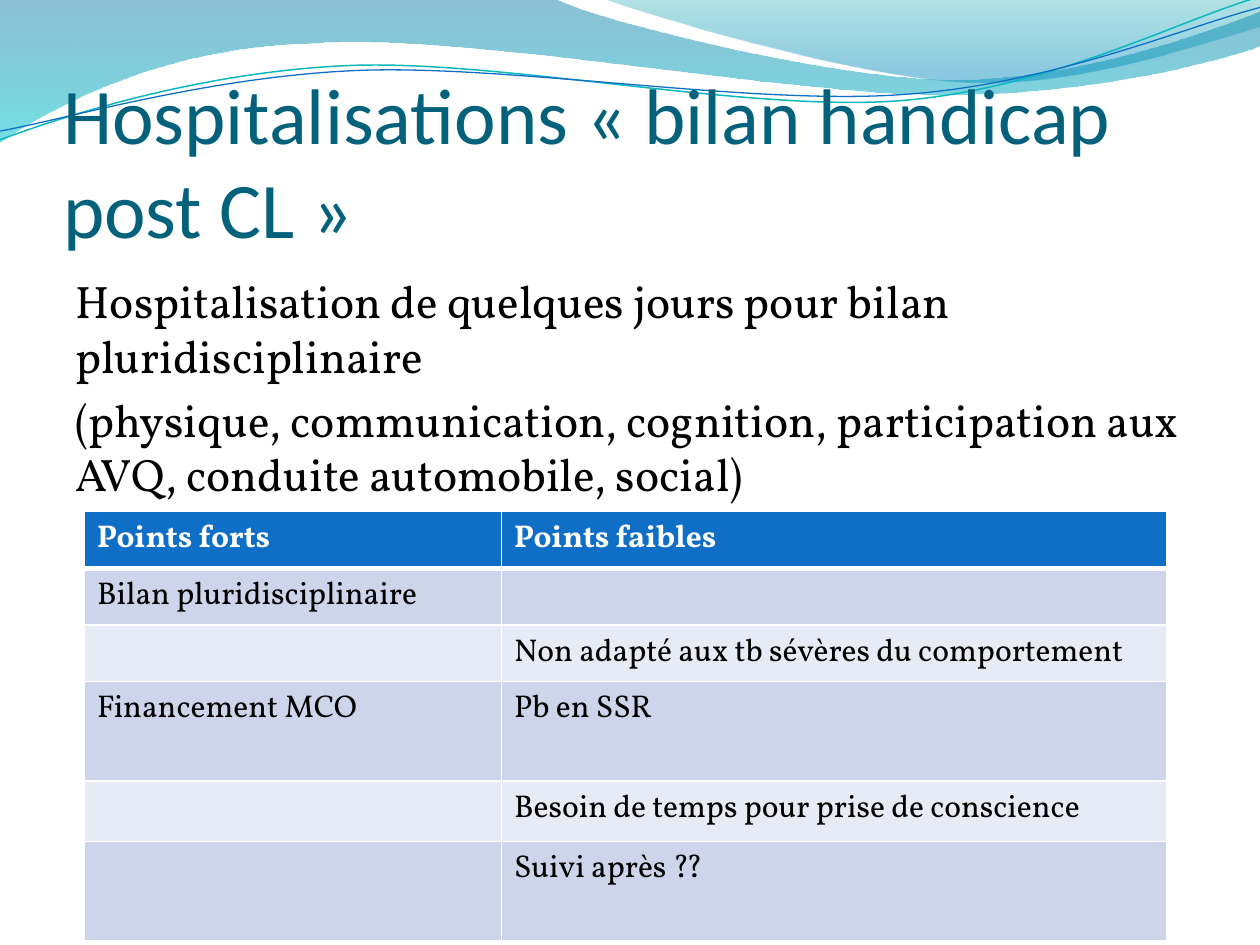
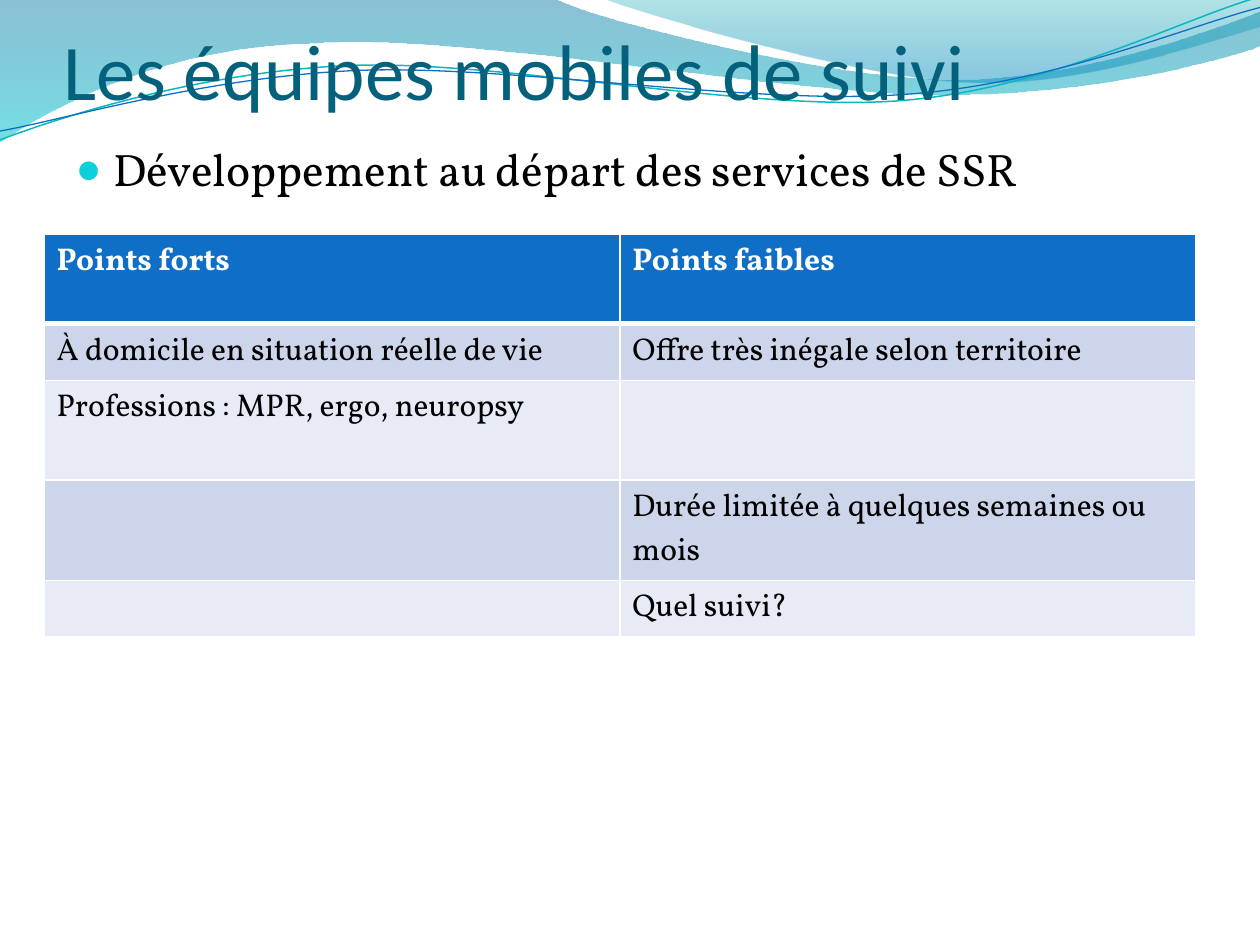
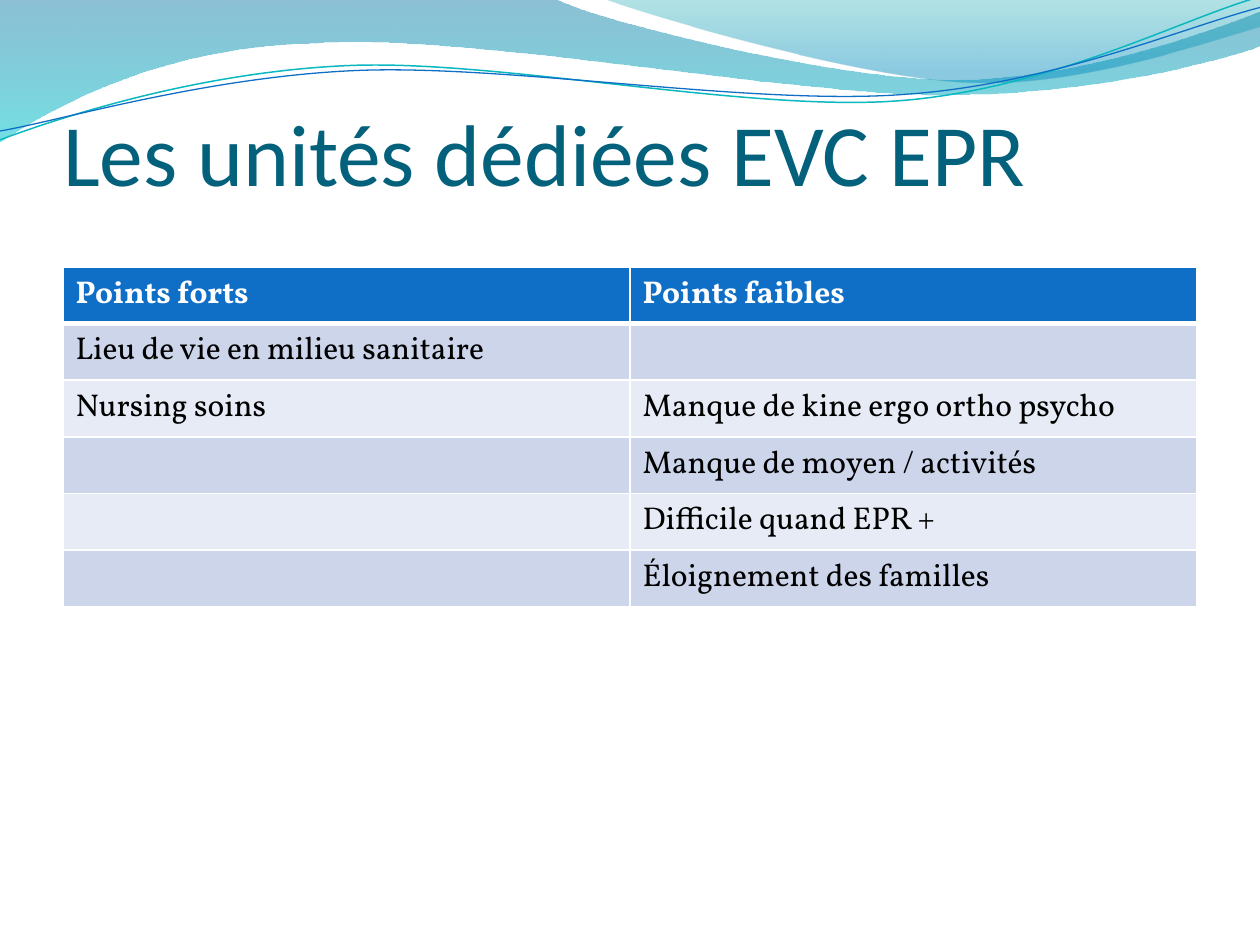
from math import cos, radians, sin

from pptx import Presentation
from pptx.dml.color import RGBColor
from pptx.enum.text import MSO_ANCHOR as Anchor, MSO_AUTO_SIZE as Fit, PP_ALIGN as Align
from pptx.oxml.ns import qn
from pptx.util import Emu, Pt
from lxml.etree import SubElement as Sub

SCALE = 9144  # EMU per px, 100 px to the inch
HEAD, BODY = "Calibri", "Vollkorn"
WHITE, BLACK, TITLE = "FFFFFF", "000000", "04617B"
BLUE, TEAL, DOT = "0F6FC6", "0AB8BF", "0BD0D9"
BANDS = ["CCD5EA", "E7EBF5"]
TILT = 2.7  # degrees the two thin curves lean to the left

# Outlines: a start point, then pairs (lines) or sixes (Bezier curves)
WAVES = [
    ([(0, 0), (440, -1), (476, 17, 664, 63, 758, 63), (853, 63, 958, 26, 1000, 9),
      (1001, 36), (983, 44, 870, 76, 746, 75), (622, 75, 382, 28, 257, 34),
      (129, 36, 46, 83, -1, 113), (0, 0)],
     [(0, "0074A1", 45), (100, "00C6CF", 55)]),
    ([(479, -1), (509, 11, 682, 62, 769, 65), (856, 69, 961, 32, 1000, 21),
      (1000, 0), (479, -1)],
     [(0, "00A1A9", 30), (80, "008BBF", 45)]),
]
CURVES = [
    ([(0, 111), (48, 93, 158, 57, 277, 52), (395, 47, 593, 89, 713, 80),
      (833, 71, 938, 15, 998, -2)], (499, 57), TEAL, 0.85),
    ([(0, 104), (47, 96, 164, 61, 283, 56), (403, 51, 597, 84, 717, 75),
      (836, 67, 941, 21, 1000, 6)], (500, 59), BLUE, 0.75),
]


def px(n):
    return Emu(round(n * SCALE))


def rgb(code):
    return RGBColor.from_string(code)


def turn(part, mid, angle):
    """Rotate the points of one part clockwise about mid."""
    c, s = cos(radians(angle)), sin(radians(angle))
    out = []
    for x, y in zip(part[::2], part[1::2]):
        dx, dy = x - mid[0], y - mid[1]
        out += [mid[0] + dx * c - dy * s, mid[1] + dx * s + dy * c]
    return tuple(out)


def bend(shape, parts):
    """Merge each three lines that stand for a curve into one Bezier."""
    track = next(shape.element.iter(qn("a:path")))
    nodes = iter(list(track)[1:])
    for part in parts:
        node = next(nodes)
        if len(part) == 6:
            node.tag = qn("a:cubicBezTo")
            for _ in range(2):
                extra = next(nodes)
                node.append(extra[0])
                track.remove(extra)


def add_path(slide, parts, close):
    pts = [(px(x), px(y)) for part in parts for x, y in zip(part[::2], part[1::2])]
    pen = slide.shapes.build_freeform(*pts[0], scale=1.0)
    pen.add_line_segments(pts[1:], close=close)
    shape = pen.convert_to_shape()
    bend(shape, parts[1:])
    shape.shadow.inherit = False
    return shape


def add_wave(slide, parts, stops):
    shape = add_path(slide, parts, True)
    shape.line.fill.background()
    fill = shape.fill
    fill.gradient()
    fill.gradient_angle = 270
    for stop, (pos, color, _) in zip(fill.gradient_stops, stops):
        stop.position = pos / 100
        stop.color.rgb = rgb(color)
    for node, (_, _, alpha) in zip(shape.element.iter(qn("a:srgbClr")), stops):
        Sub(node, qn("a:alpha"), val=str(alpha * 1000))
    return shape


def add_curve(slide, parts, mid, color, width):
    shape = add_path(slide, [turn(part, mid, TILT) for part in parts], False)
    shape.rotation = 360 - TILT
    shape.fill.background()
    shape.line.color.rgb = rgb(color)
    shape.line.width = Pt(width)
    return shape


def dress(prs, slide):
    """Draw the wave band and move it to the master, behind everything."""
    band = [add_wave(slide, *wave) for wave in WAVES]
    band += [add_curve(slide, *curve) for curve in CURVES]
    tree = prs.slide_master.shapes.element
    for i, shape in enumerate(band):
        node = shape.element
        node.nvSpPr.cNvPr.set("id", str(20 + i))
        tree.insert(2 + i, node)


def place(shape, box):
    shape.left, shape.top, shape.width, shape.height = map(px, box)


def style(para, name, size, color, bold=False):
    font = para.font
    font.name, font.size, font.bold = name, Pt(size), bold
    font.color.rgb = rgb(color)
    para.alignment = Align.LEFT


def set_title(slide, text, box, size=45):
    shape = slide.shapes.title
    place(shape, box)
    frame = shape.text_frame
    frame.text = text
    frame.auto_size = Fit.NONE
    frame.vertical_anchor = Anchor.BOTTOM
    frame.margin_left = frame.margin_right = frame.margin_bottom = 0
    frame.margin_top = px(5)
    style(frame.paragraphs[0], HEAD, size, TITLE)


def set_mark(para, dot):
    """Give the paragraph a round bullet, or none and no indent."""
    props = para._p.get_or_add_pPr()
    inset = px(30) if dot else 0
    props.set("marL", str(inset))
    props.set("indent", str(-inset))
    if not dot:
        Sub(props, qn("a:buNone"))
        return
    Sub(Sub(props, qn("a:buClr")), qn("a:srgbClr"), val=DOT)
    Sub(props, qn("a:buSzPct"), val="95000")
    Sub(props, qn("a:buFont"), typeface="Arial")
    Sub(props, qn("a:buChar"), char="●")


def set_body(slide, lines, box, dot=False):
    shape = slide.placeholders[1]
    place(shape, box)
    frame = shape.text_frame
    frame.text = "\n".join(lines)
    frame.auto_size = Fit.NONE
    for para in frame.paragraphs:
        style(para, BODY, 26, BLACK)
        set_mark(para, dot)


def set_edges(cell, top, bottom):
    props = cell._tc.get_or_add_tcPr()
    for side, width in (("L", 1), ("R", 1), ("T", top), ("B", bottom)):
        edge = Sub(props, qn("a:ln" + side), w=str(Pt(width)))
        Sub(Sub(edge, qn("a:solidFill")), qn("a:srgbClr"), val=WHITE)


def add_grid(slide, left, top, cols, heights, rows):
    """Add the table of strong and weak points."""
    rows = [("Points forts", "Points faibles")] + rows
    grid = slide.shapes.add_table(len(rows), len(cols), px(left), px(top),
                                  px(sum(cols)), px(sum(heights))).table
    for col, width in zip(grid.columns, cols):
        col.width = px(width)
    for r, (texts, height) in enumerate(zip(rows, heights)):
        grid.rows[r].height = px(height)
        head = r == 0
        for c, text in enumerate(texts):
            cell = grid.cell(r, c)
            set_edges(cell, 3 if r == 1 else 1, 3 if head else 1)
            cell.fill.solid()
            cell.fill.fore_color.rgb = rgb(BLUE if head else BANDS[(r - 1) % 2])
            if text:
                cell.text = text
                style(cell.text_frame.paragraphs[0], BODY, 18,
                      WHITE if head else BLACK, head)


def add_stay(slide):
    set_title(slide, "Hospitalisations « bilan handicap post CL »", (50, 77, 900, 125))
    set_body(slide, [
        "Hospitalisation de quelques jours pour bilan pluridisciplinaire",
        "(physique, communication, cognition, participation aux AVQ, "
        "conduite automobile, social)",
    ], (50, 212, 900, 480))
    add_grid(slide, 67, 406, [331, 528], [45, 45, 45, 79, 48, 79], [
        ("Bilan pluridisciplinaire", ""),
        ("", "Non adapté aux tb sévères du comportement"),
        ("Financement MCO", "Pb en SSR"),
        ("", "Besoin de temps pour prise de conscience"),
        ("", "Suivi après ??"),
    ])


def add_teams(slide):
    set_title(slide, "Les équipes mobiles de suivi", (50, 13, 900, 79))
    set_body(slide, ["Développement au départ des services de SSR"],
             (50, 107, 900, 449), dot=True)
    add_grid(slide, 35, 186, [457, 457], [71, 41, 79, 79, 41], [
        ("À domicile en situation réelle de vie", "Offre très inégale selon territoire"),
        ("Professions : MPR, ergo, neuropsy", ""),
        ("", "Durée limitée à quelques semaines ou mois"),
        ("", "Quel suivi?"),
    ])


def add_units(slide):
    set_title(slide, "Les unités dédiées EVC EPR", (50, 52, 900, 110), 50)
    add_grid(slide, 50, 212, [450, 450], [41] * 6, [
        ("Lieu de vie en milieu sanitaire", ""),
        ("Nursing soins", "Manque de kine ergo ortho psycho"),
        ("", "Manque de moyen / activités"),
        ("", "Difficile quand EPR +"),
        ("", "Éloignement des familles"),
    ])


def main():
    prs = Presentation()
    prs.slide_width, prs.slide_height = px(1000), px(750)
    full, bare = prs.slide_layouts[1], prs.slide_layouts[5]
    first = prs.slides.add_slide(full)
    dress(prs, first)
    add_stay(first)
    add_teams(prs.slides.add_slide(full))
    add_units(prs.slides.add_slide(bare))
    prs.save("out.pptx")


if __name__ == "__main__":
    main()
